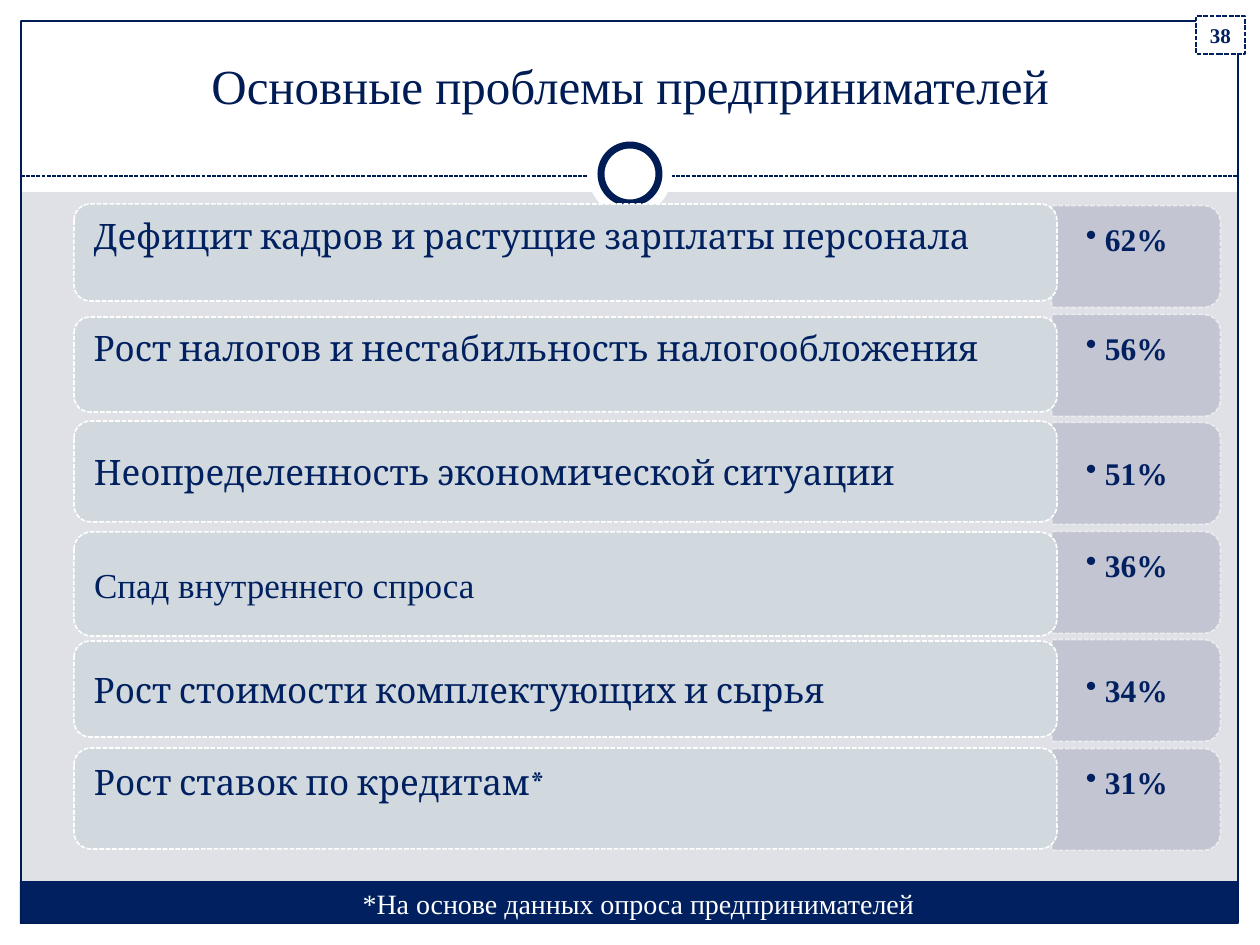
import pptx
import pptx.util
import pptx.dml.color
import pptx.enum.dml
import pptx.enum.shapes
import pptx.enum.text
import pptx.oxml
import pptx.oxml.ns

PX_PER_INCH = 126
COLOURS = {
    "background": "DFE1E7", "white": "FFFFFF", "navy": "002060", "dark": "001C55",
    "label": "D1D9DF", "percent": "C0C3D0", "percent_line": "EEF1F3",
}
SHAPES = pptx.enum.shapes.MSO_SHAPE
ANCHOR = pptx.enum.text.MSO_ANCHOR
CENTER = pptx.enum.text.PP_ALIGN.CENTER
SERIF = "Times New Roman"

# Label, font, percent, label top and height, label raised, percent raised
PROBLEMS = [
    ("Дефицит кадров и растущие зарплаты персонала", "Cambria", "62%", 204, 97, True, True),
    ("Рост налогов и нестабильность налогообложения", "Cambria", "56%", 317, 95, True, True),
    ("Неопределенность экономической ситуации", "Cambria", "51%", 421, 101, False, False),
    ("Спад внутреннего спроса", SERIF, "36%", 532, 104, False, True),
    ("Рост стоимости комплектующих и сырья", "Cambria", "34%", 641, 96, False, False),
    ("Рост ставок по кредитам*", "Cambria", "31%", 748, 101, True, True),
]
PERCENT_TOP, PERCENT_PITCH = 205, 108.6
RAISE = 34  # extra bottom inset that lifts middle-anchored text


def px(value):
    return pptx.util.Emu(round(value * 914400 / PX_PER_INCH))


def colour(name):
    return pptx.dml.color.RGBColor.from_string(COLOURS[name])


def set_alpha(parent, percent):
    for element in parent.iter(pptx.oxml.ns.qn("a:srgbClr")):
        alpha = pptx.oxml.parse_xml(
            f'<a:alpha {pptx.oxml.ns.nsdecls("a")} val="{percent * 1000}"/>')
        element.append(alpha)


def format_line(line, name, width, dashed=False):
    line.color.rgb = colour(name)
    line.width = pptx.util.Pt(width)
    if dashed:
        line.dash_style = pptx.enum.dml.MSO_LINE.SQUARE_DOT


def add_box(slide, kind, box, fill=None, line=None):
    shape = slide.shapes.add_shape(kind, *map(px, box))
    shape.shadow.inherit = False
    if fill:
        shape.fill.solid()
        shape.fill.fore_color.rgb = colour(fill)
    else:
        shape.fill.background()
    if line:
        format_line(shape.line, *line)
    else:
        shape.line.fill.background()
    return shape


def add_text_box(slide, box):
    return slide.shapes.add_textbox(*map(px, box))


def write(shape, text, font, size, name, bold=False, align=None,
          anchor=ANCHOR.MIDDLE, insets=(13, 6, 13, 6)):
    frame = shape.text_frame
    sides = ("margin_left", "margin_top", "margin_right", "margin_bottom")
    frame_format = dict(zip(sides, map(px, insets)))
    frame_format.update(word_wrap=True, vertical_anchor=anchor)
    for key, value in frame_format.items():
        setattr(frame, key, value)
    paragraph = frame.paragraphs[0]
    paragraph.alignment = align or pptx.enum.text.PP_ALIGN.LEFT
    run = paragraph.add_run()
    run.text = text
    for key, value in {"name": font, "size": pptx.util.Pt(size), "bold": bold}.items():
        setattr(run.font, key, value)
    run.font.color.rgb = colour(name)
    return paragraph


def add_bullet(paragraph, indent):
    properties = paragraph._p.get_or_add_pPr()
    properties.set("marL", str(px(indent)))
    properties.set("indent", str(-px(indent)))
    properties.append(pptx.oxml.parse_xml(
        f'<a:buChar {pptx.oxml.ns.nsdecls("a")} char="•"/>'))


def add_frame(slide):
    # White margins around the grey body, and the footer bar
    for box in [(0, 924, 1260, 21), (0, 0, 1260, 192), (0, 0, 21, 945), (1239, 0, 21, 945)]:
        add_box(slide, SHAPES.RECTANGLE, box, "white")
    add_box(slide, SHAPES.RECTANGLE, (20, 881, 1218, 43), "navy")
    add_box(slide, SHAPES.RECTANGLE, (21, 21, 1217, 902), line=("dark", 0.75))

    # Dashed rule with the ring over it
    rule = slide.shapes.add_connector(
        pptx.enum.shapes.MSO_CONNECTOR.STRAIGHT, px(21), px(176), px(1239), px(176))
    format_line(rule.line, "dark", 0.75, True)
    rule._element.spPr.append(pptx.oxml.parse_xml(
        f'<a:effectLst {pptx.oxml.ns.nsdecls("a")}/>'))
    add_box(slide, SHAPES.OVAL, (588, 132, 84, 84), "white")
    add_box(slide, SHAPES.OVAL, (601, 145, 58, 58), "white", ("dark", 4))


def add_title(slide, text):
    title = slide.shapes.title
    for key, value in zip(("left", "top", "width", "height"), (49, 38, 1162, 82)):
        setattr(title, key, px(value))
    write(title, text, SERIF, 28, "dark", align=CENTER, anchor=ANCHOR.BOTTOM)
    # Bring the title in front of the white header
    slide.shapes._spTree.append(title._element)


def add_problem(slide, index, problem):
    text, font, percent, top, height, label_raised, percent_raised = problem

    # Percent tab, turned so that its round corners face right
    tab_top = round(PERCENT_TOP + index * PERCENT_PITCH)
    tab = add_box(slide, SHAPES.ROUND_2_SAME_RECTANGLE, (1085, tab_top - 33, 102, 169),
                  "percent", ("percent_line", 0.9, True))
    tab.rotation = 90
    set_alpha(tab._element.spPr, 90)
    value = add_text_box(slide, (1052, tab_top + 5, 164, 92))
    paragraph = write(value, percent, SERIF, 18, "navy", bold=True,
                      insets=(34, 18, 34, 18 + RAISE * percent_raised))
    add_bullet(paragraph, 19)

    # Label
    label = add_box(slide, SHAPES.ROUNDED_RECTANGLE, (74, top, 983, height),
                    "label", ("white", 0.9, True))
    write(label, text, font, 20, "navy", insets=(15, 10, 15, 10 + RAISE * label_raised))


def main():
    presentation = pptx.Presentation()
    presentation.slide_width = px(1260)
    presentation.slide_height = px(945)
    slide = presentation.slides.add_slide(presentation.slide_layouts[5])
    slide.background.fill.solid()
    slide.background.fill.fore_color.rgb = colour("background")

    add_frame(slide)
    add_title(slide, "Основные проблемы предпринимателей")

    # Slide number
    number = add_box(slide, SHAPES.RECTANGLE, (1196, 16, 49, 38), "white", ("navy", 0.9, True))
    write(number, "38", SERIF, 12, "navy", bold=True, align=CENTER, insets=(0, 6, 0, 6))

    for index, problem in enumerate(PROBLEMS):
        add_problem(slide, index, problem)

    # Footnote
    footnote = add_text_box(slide, (243, 880, 791, 47))
    write(footnote, "*На основе данных опроса предпринимателей", SERIF, 16, "white", align=CENTER)
    presentation.save("out.pptx")


if __name__ == "__main__":
    main()
